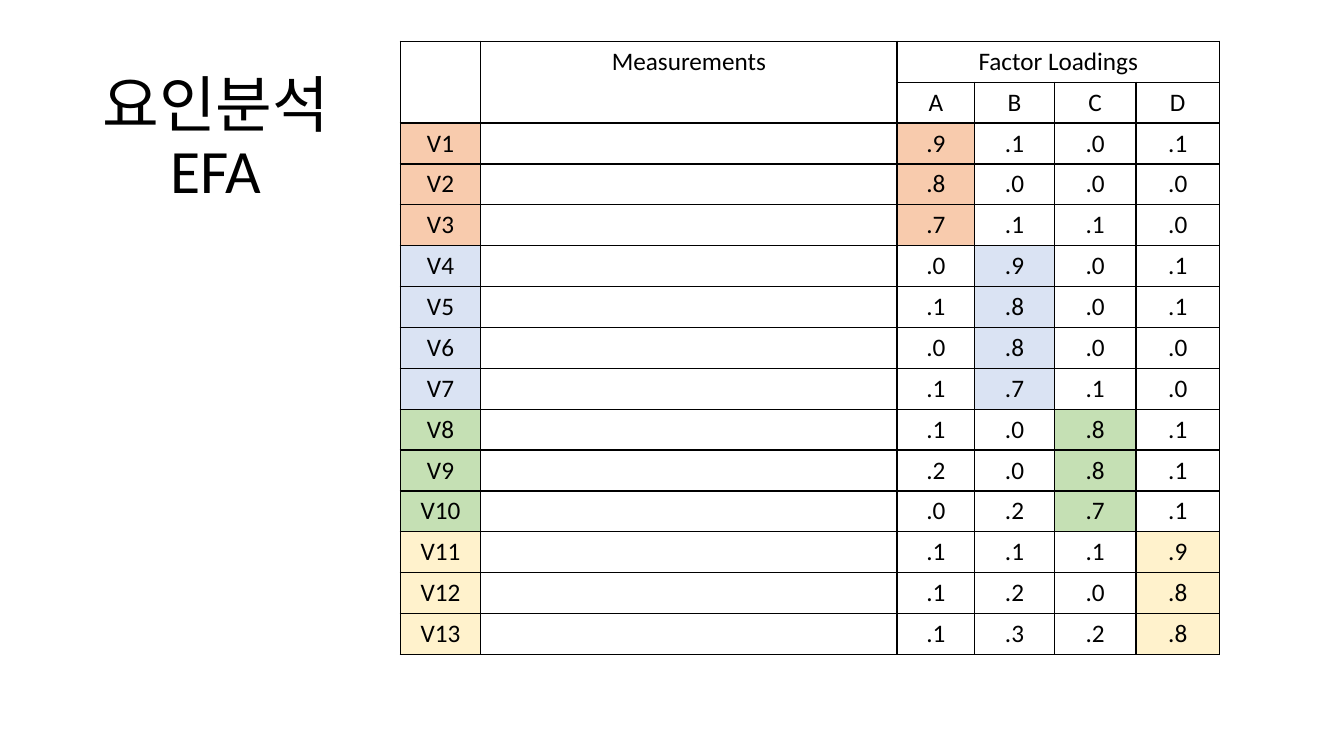
from lxml import etree
from pptx import Presentation
from pptx import util as u
from pptx.dml.color import RGBColor
from pptx.enum import text
from pptx.oxml.ns import qn

WIDTH, HEIGHT = 13.33, 7.5
GRID_COLUMNS, GRID_ROWS = 40, 30
BLACK = "000000"

FACTORS = ["A", "B", "C", "D"]
GROUPS = [
    ("F8CBAD", [".9 .1 .0 .1", ".8 .0 .0 .0", ".7 .1 .1 .0"]),
    ("DAE3F3", [".0 .9 .0 .1", ".1 .8 .0 .1", ".0 .8 .0 .0", ".1 .7 .1 .0"]),
    ("C5E0B4", [".1 .0 .8 .1", ".2 .0 .8 .1", ".0 .2 .7 .1"]),
    ("FFF2CC", [".1 .1 .1 .9", ".1 .2 .0 .8", ".1 .3 .2 .8"]),
]
COLUMN_WIDTHS = [2.4, 12.39, 2.31, 2.37, 2.43, 2.49]
ROW_HEIGHT = 1.6
HEADER_ROWS = 2
FIRST_FACTOR = 2


def color(value):
    return RGBColor.from_string(value)


def across(columns):
    return u.Inches(columns * WIDTH / GRID_COLUMNS)


def down(rows):
    return u.Inches(rows * HEIGHT / GRID_ROWS)


class SlideBuilder:
    font_name = "Calibri"
    title_size = 44
    table_size = 18

    def __init__(self, deck):
        self.page = deck.slides.add_slide(deck.slide_layouts[5])

    def style(self, paragraph, size):
        paragraph.alignment = text.PP_ALIGN.CENTER
        paragraph.font.name = self.font_name
        paragraph.font.size = u.Pt(size)
        paragraph.font.color.rgb = color(BLACK)

    def title(self, wording, left, top, width, height):
        box = self.page.shapes.title
        box.left, box.top = across(left), down(top)
        box.width, box.height = across(width), down(height)
        box.text_frame.text = wording
        box.text_frame.vertical_anchor = text.MSO_ANCHOR.MIDDLE
        paragraph = box.text_frame.paragraphs[0]
        paragraph.line_spacing = 0.9
        self.style(paragraph, self.title_size)

    def table(self, left, top, widths, row_count, row_height):
        frame = self.page.shapes.add_table(
            row_count, len(widths), across(left), down(top),
            across(sum(widths)), down(row_count * row_height))
        table = frame.table
        table.first_row = table.horz_banding = False
        for column, width in zip(table.columns, widths):
            column.width = across(width)
        for row in table.rows:
            row.height = down(row_height)
        for cell in table.iter_cells():
            self.border(cell)
            cell.fill.background()
            self.style(cell.text_frame.paragraphs[0], self.table_size)
        return table

    def border(self, cell):
        properties = cell._tc.get_or_add_tcPr()
        for side in ("a:lnL", "a:lnR", "a:lnT", "a:lnB"):
            line = etree.SubElement(properties, qn(side), w=str(u.Pt(1)))
            fill = etree.SubElement(line, qn("a:solidFill"))
            etree.SubElement(fill, qn("a:srgbClr"), val=BLACK)

    def label(self, cell, wording, fill=None):
        paragraph = cell.text_frame.paragraphs[0]
        paragraph.add_run().text = wording
        if fill:
            cell.fill.solid()
            cell.fill.fore_color.rgb = color(fill)


def add_loadings(builder):
    variables = [(factor, fill, loadings.split())
                 for factor, (fill, rows) in enumerate(GROUPS)
                 for loadings in rows]
    table = builder.table(11.91, 1.64, COLUMN_WIDTHS,
                          HEADER_ROWS + len(variables), ROW_HEIGHT)

    table.cell(0, 0).merge(table.cell(1, 0))
    table.cell(0, 1).merge(table.cell(1, 1))
    table.cell(0, FIRST_FACTOR).merge(table.cell(0, len(COLUMN_WIDTHS) - 1))
    builder.label(table.cell(0, 1), "Measurements")
    builder.label(table.cell(0, FIRST_FACTOR), "Factor Loadings")
    for column, name in enumerate(FACTORS, FIRST_FACTOR):
        builder.label(table.cell(1, column), name)

    for number, (factor, fill, loadings) in enumerate(variables, 1):
        row = HEADER_ROWS + number - 1
        builder.label(table.cell(row, 0), f"V{number}", fill)
        for index, loading in enumerate(loadings):
            builder.label(table.cell(row, FIRST_FACTOR + index), loading,
                          fill if index == factor else None)


def main():
    deck = Presentation()
    deck.slide_width, deck.slide_height = u.Inches(WIDTH), u.Inches(HEIGHT)
    builder = SlideBuilder(deck)
    builder.title("요인분석\vEFA", 2, 2.68, 8.85, 5.8)
    add_loadings(builder)
    deck.save("out.pptx")


if __name__ == "__main__":
    main()
